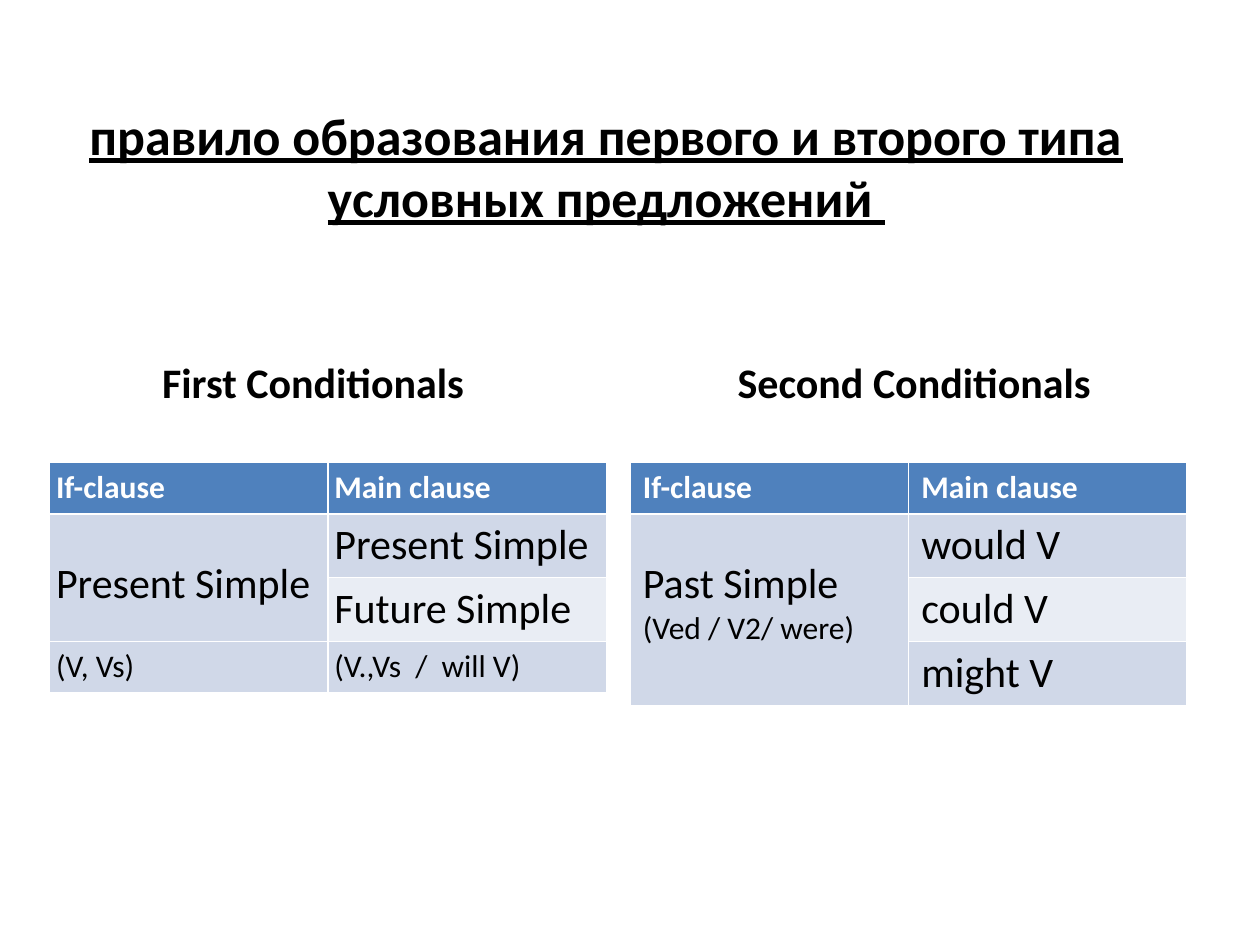
from dataclasses import dataclass

from pptx import Presentation
from pptx.dml.color import RGBColor
from pptx.enum.text import MSO_ANCHOR, MSO_AUTO_SIZE, PP_ALIGN
from pptx.util import Pt


@dataclass(frozen=True)
class Theme:
    font: str = "Calibri"
    black: RGBColor = RGBColor(0x00, 0x00, 0x00)
    white: RGBColor = RGBColor(0xFF, 0xFF, 0xFF)
    header: RGBColor = RGBColor(0x4F, 0x81, 0xBD)
    band: RGBColor = RGBColor(0xD0, 0xD8, 0xE8)
    light_band: RGBColor = RGBColor(0xE9, 0xED, 0xF4)
    title: float = 29.7
    large: float = 24
    small: float = 18


THEME = Theme()
COLUMN_WIDTH = 159.1
ROW_HEIGHTS = {THEME.small: 29.2, THEME.large: 36.5}
CELL_MARGIN = 3.6
CLAUSE_DROP = 22

HEADER = ["If-clause", "Main clause"]


def add_span(para, text, size, color=THEME.black, bold=False, underline=None):
    span = para.add_run()
    span.text = text
    font = span.font
    font.name, font.size, font.bold, font.underline = THEME.font, Pt(size), bold, underline
    font.color.rgb = color


def place_title(page, text):
    box = page.shapes.title
    box.left, box.top, box.width, box.height = Pt(22.5), Pt(67.5), Pt(648), Pt(90)
    frame = box.text_frame
    frame.word_wrap = True
    frame.auto_size = MSO_AUTO_SIZE.NONE
    frame.vertical_anchor = MSO_ANCHOR.MIDDLE
    frame.margin_bottom = Pt(39)
    para = frame.paragraphs[0]
    para.alignment = PP_ALIGN.CENTER
    add_span(para, text, THEME.title, bold=True, underline=True)


def add_heading(page, left, text):
    box = page.shapes.add_textbox(Pt(left), Pt(185.8), Pt(2 * COLUMN_WIDTH), Pt(50.4))
    frame = box.text_frame
    frame.word_wrap = True
    frame.vertical_anchor = MSO_ANCHOR.BOTTOM
    para = frame.paragraphs[0]
    para.alignment = PP_ALIGN.CENTER
    add_span(para, text, THEME.large, bold=True)


def fill_cell(cell, lines, fill, side_margin, **style):
    """Write (text, size) lines, one paragraph each, on a solid fill."""
    cell.fill.solid()
    cell.fill.fore_color.rgb = fill
    cell.margin_left = cell.margin_right = Pt(side_margin)
    cell.margin_top = cell.margin_bottom = Pt(CELL_MARGIN)
    frame = cell.text_frame
    for index, (text, size) in enumerate(lines):
        para = frame.add_paragraph() if index else frame.paragraphs[0]
        add_span(para, text, size, **style)


def add_clause_table(page, left, side_margin, rows, merged_rows):
    """Each row is (if-clause lines, main-clause line); the first if-clause spans merged_rows."""
    sizes = [THEME.small] + [main[1] for _, main in rows]
    heights = [ROW_HEIGHTS[size] for size in sizes]
    frame = page.shapes.add_table(len(heights), 2, Pt(left), Pt(264.4),
                                  Pt(2 * COLUMN_WIDTH), Pt(sum(heights)))
    table = frame.table
    for column in table.columns:
        column.width = Pt(COLUMN_WIDTH)
    for row, height in zip(table.rows, heights):
        row.height = Pt(height)
    for column, text in enumerate(HEADER):
        fill_cell(table.cell(0, column), [(text, THEME.small)], THEME.header,
                  side_margin, color=THEME.white, bold=True)
    table.cell(1, 0).merge(table.cell(merged_rows, 0))
    for index, (if_lines, main) in enumerate(rows, start=1):
        fill = THEME.band if index % 2 else THEME.light_band
        fill_cell(table.cell(index, 0), if_lines, fill, side_margin)
        fill_cell(table.cell(index, 1), [main], fill, side_margin)
    table.cell(1, 0).margin_top = Pt(CELL_MARGIN + CLAUSE_DROP)


def main():
    deck = Presentation()
    deck.slide_width, deck.slide_height = Pt(720), Pt(540)
    page = deck.slides.add_slide(deck.slide_layouts[5])
    large, small = THEME.large, THEME.small

    place_title(page, "правило образования первого и второго типа условных предложений ")

    add_heading(page, 22.5, "First Conditionals ")
    add_clause_table(page, 28.4, 3.6, [
        ([("Present Simple", large)], ("Present Simple", large)),
        ([], ("Future Simple", large)),
        ([("(V, Vs)", small)], ("(V.,Vs  /  will V)", small)),
    ], merged_rows=2)

    add_heading(page, 366, "Second Conditionals ")
    add_clause_table(page, 360.2, 7.2, [
        ([("Past Simple", large), ("(Ved / V2/ were)", small)], ("would V", large)),
        ([], ("could V", large)),
        ([], ("might V", large)),
    ], merged_rows=3)

    deck.save("out.pptx")


if __name__ == "__main__":
    main()
